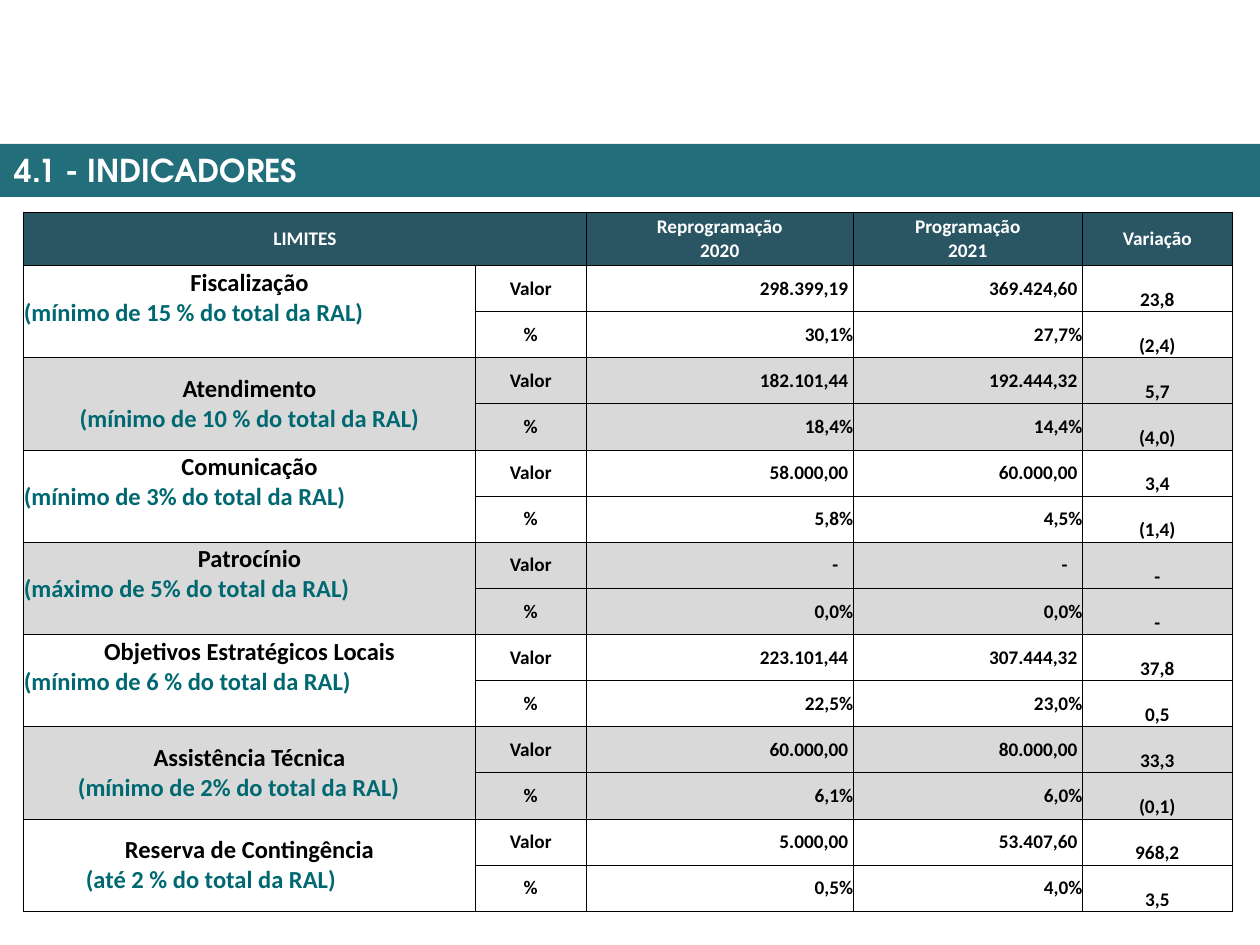
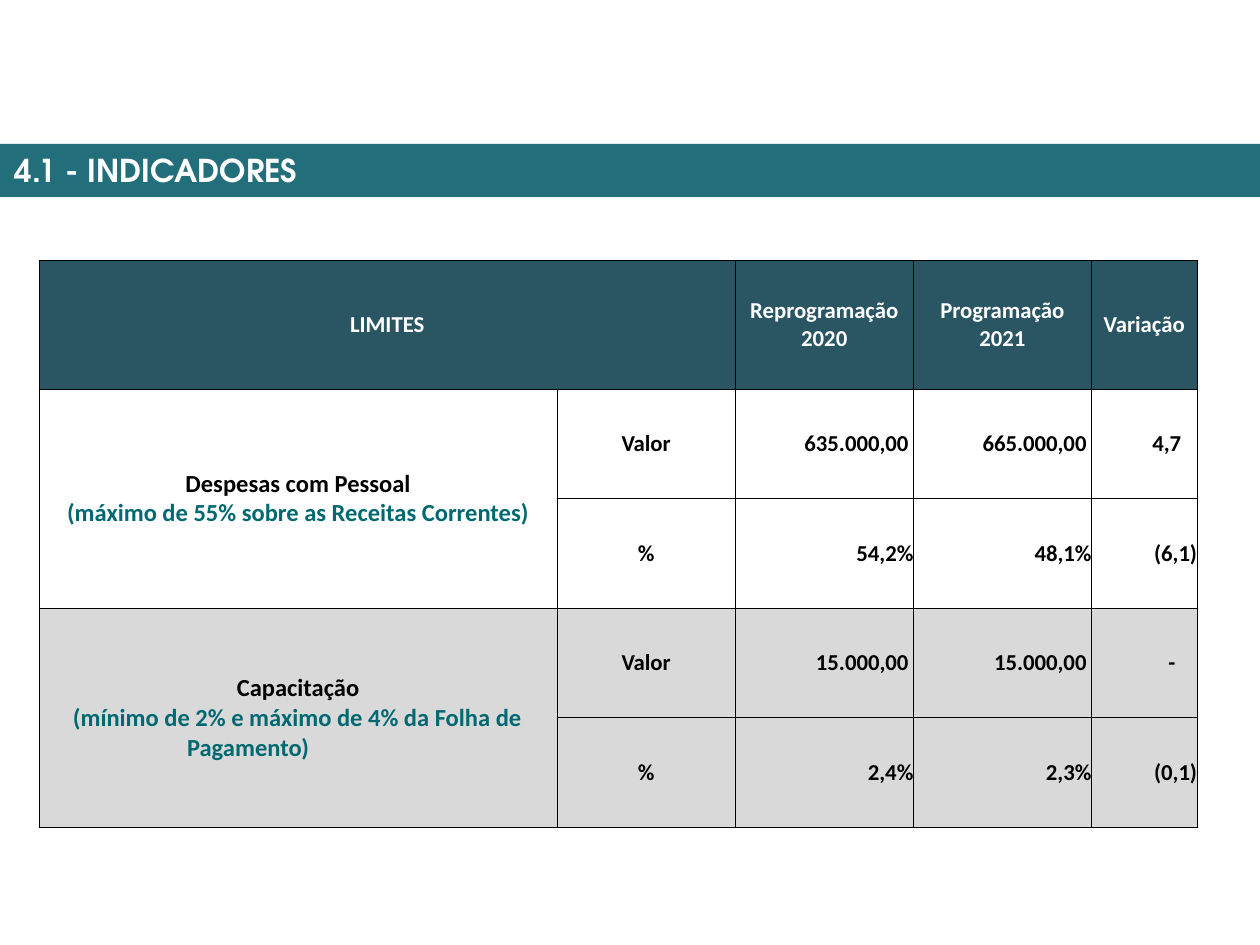
from pptx import Presentation
from pptx import util as u
from pptx.dml import color
from pptx.enum import shapes, text
from pptx.oxml import parse_xml
from pptx.oxml import ns

BAND = color.RGBColor(0x22, 0x6E, 0x7B)
HEADER = color.RGBColor(0x2A, 0x56, 0x64)
NOTE = color.RGBColor(0x00, 0x68, 0x71)
STRIPE = color.RGBColor(0xD9, 0xD9, 0xD9)
WHITE = color.RGBColor(0xFF, 0xFF, 0xFF)
BLACK = color.RGBColor(0x00, 0x00, 0x00)

LEFT, CENTER, RIGHT = text.PP_ALIGN.LEFT, text.PP_ALIGN.CENTER, text.PP_ALIGN.RIGHT
TOP, MIDDLE, BOTTOM = text.MSO_ANCHOR.TOP, text.MSO_ANCHOR.MIDDLE, text.MSO_ANCHOR.BOTTOM

HEADINGS = ["LIMITES", "", "Reprogramação\n2020", "Programação\n2021", "Variação"]


def write(frame, content, size=11, font="Calibri", fill=BLACK, align=CENTER, margin=0, hanging=0):
    for line in content.split("\n"):
        paragraph = frame.paragraphs[0]
        if paragraph.runs:
            paragraph = frame.add_paragraph()
        paragraph.alignment = align
        if margin:
            properties = paragraph._p.get_or_add_pPr()
            properties.set("marL", str(u.Cm(margin)))
            properties.set("indent", str(-u.Cm(hanging)))
        run = paragraph.add_run()
        run.text = line
        run.font.size = u.Pt(size)
        run.font.name = font
        run.font.bold = True
        run.font.color.rgb = fill


def style_cell(cell, fill):
    cell.margin_left = cell.margin_right = cell.margin_top = cell.margin_bottom = 0
    cell.vertical_anchor = MIDDLE
    properties = cell._tc.get_or_add_tcPr()
    for side in ("lnL", "lnR", "lnT", "lnB"):
        properties.append(parse_xml(
            f'<a:{side} {ns.nsdecls("a")} w="6350"><a:solidFill>'
            f'<a:srgbClr val="{BLACK}"/></a:solidFill></a:{side}>'))
    cell.fill.solid()
    cell.fill.fore_color.rgb = fill


tables = [
    {
        "left": 0.48, "top": 4.28, "size": 11,
        "columns": [9.1, 2.24, 5.38, 4.62, 3.02],
        "header_height": 1.07, "row_height": 0.93,
        "dash_margin": 0.3,
        "variation": {"align": CENTER, "anchor": BOTTOM, "margin": 0, "dash_margin": 0},
        "indicators": [
            ("Fiscalização", "(mínimo de 15 % do total da RAL)", TOP, {"align": LEFT},
             ["298.399,19", "369.424,60", "23,8"], ["30,1%", "27,7%", "(2,4)"]),
            ("Atendimento", "(mínimo de 10 % do total da RAL)", MIDDLE, {},
             ["182.101,44", "192.444,32", "5,7"], ["18,4%", "14,4%", "(4,0)"]),
            ("Comunicação", "(mínimo de 3% do total da RAL)", TOP, {"align": LEFT},
             ["58.000,00", "60.000,00", "3,4"], ["5,8%", "4,5%", "(1,4)"]),
            ("Patrocínio", "(máximo de 5% do total da RAL)", TOP, {"align": LEFT},
             ["-", "-", "-"], ["0,0%", "0,0%", "-"]),
            ("Objetivos Estratégicos Locais", "(mínimo de 6 % do total da RAL)", TOP, {"align": LEFT},
             ["223.101,44", "307.444,32", "37,8"], ["22,5%", "23,0%", "0,5"]),
            ("Assistência Técnica", "(mínimo de 2% do total da RAL)", MIDDLE,
             {"align": LEFT, "margin": 1.09},
             ["60.000,00", "80.000,00", "33,3"], ["6,1%", "6,0%", "(0,1)"]),
            ("Reserva de Contingência", "(até 2 % do total da RAL)", MIDDLE,
             {"align": LEFT, "margin": 1.25},
             ["5.000,00", "53.407,60", "968,2"], ["0,5%", "4,0%", "3,5"]),
        ],
    },
    {
        "left": 0.79, "top": 5.25, "size": 13,
        "columns": [10.44, 3.59, 3.59, 3.59, 2.13],
        "header_height": 2.59, "row_height": 2.21,
        "dash_margin": 0.3,
        "variation": {"align": RIGHT, "anchor": MIDDLE, "margin": 0.32, "dash_margin": 0.44},
        "indicators": [
            ("Despesas com Pessoal", "(máximo de 55% sobre as Receitas Correntes)", MIDDLE, {},
             ["635.000,00", "665.000,00", "4,7"], ["54,2%", "48,1%", "(6,1)"]),
            ("Capacitação", "(mínimo de 2% e máximo de 4% da Folha de Pagamento)", MIDDLE,
             {"align": LEFT, "margin": 2.98, "hanging": 2.3},
             ["15.000,00", "15.000,00", "-"], ["2,4%", "2,3%", "(0,1)"]),
        ],
    },
]

presentation = Presentation()
presentation.slide_width = u.Cm(25.4)
presentation.slide_height = u.Cm(19.05)

for layout in tables:
    slide = presentation.slides.add_slide(presentation.slide_layouts[6])

    band = slide.shapes.add_shape(
        shapes.MSO_SHAPE.RECTANGLE, 0, u.Cm(2.9), presentation.slide_width, u.Cm(1.07))
    band.shadow.inherit = False
    band.fill.solid()
    band.fill.fore_color.rgb = BAND
    band.line.fill.background()
    frame = band.text_frame
    frame.word_wrap = True
    frame.vertical_anchor = TOP
    frame.margin_left = frame.margin_right = u.Cm(0.3)
    frame.margin_top = frame.margin_bottom = u.Cm(0.15)
    write(frame, "4.1 - INDICADORES", size=18, font="TeX Gyre Adventor", fill=WHITE, align=LEFT)

    size = layout["size"]
    variation = layout["variation"]
    indicators = layout["indicators"]
    row_count = 1 + 2 * len(indicators)
    height = layout["header_height"] + layout["row_height"] * (row_count - 1)
    table = slide.shapes.add_table(
        row_count, len(HEADINGS), u.Cm(layout["left"]), u.Cm(layout["top"]),
        u.Cm(sum(layout["columns"])), u.Cm(height)).table
    table.first_row = False
    table.horz_banding = False
    for column, width in zip(table.columns, layout["columns"]):
        column.width = u.Cm(width)
    for index, row in enumerate(table.rows):
        row.height = u.Cm(layout["row_height"] if index else layout["header_height"])
        striped = (index - 1) // 2 % 2 == 1
        fill = HEADER if index == 0 else STRIPE if striped else WHITE
        for cell in row.cells:
            style_cell(cell, fill)

    table.cell(0, 0).merge(table.cell(0, 1))
    for column, heading in enumerate(HEADINGS):
        if heading:
            write(table.cell(0, column).text_frame, heading, size=size, fill=WHITE)

    for index, (name, note, anchor, note_format, amounts, shares) in enumerate(indicators):
        first_row = 1 + 2 * index
        label = table.cell(first_row, 0)
        label.merge(table.cell(first_row + 1, 0))
        label.vertical_anchor = anchor
        if anchor == TOP:
            label.margin_top = u.Cm(0.05)
        write(label.text_frame, name, size=14)
        write(label.text_frame, note, size=14, fill=NOTE, **note_format)

        for offset, (unit, values) in enumerate([("Valor", amounts), ("%", shares)]):
            row = first_row + offset
            write(table.cell(row, 1).text_frame, unit, size=size)
            for column, value in enumerate(values, start=2):
                cell = table.cell(row, column)
                is_variation = column == 4
                margin = variation["margin"] if is_variation else 0.1
                if value == "-":
                    margin = (variation if is_variation else layout)["dash_margin"]
                elif unit == "%":
                    margin = 0
                cell.margin_right = u.Cm(margin)
                if is_variation:
                    cell.vertical_anchor = variation["anchor"]
                write(cell.text_frame, value, size=size,
                      align=variation["align"] if is_variation else RIGHT)

presentation.save("out.pptx")
